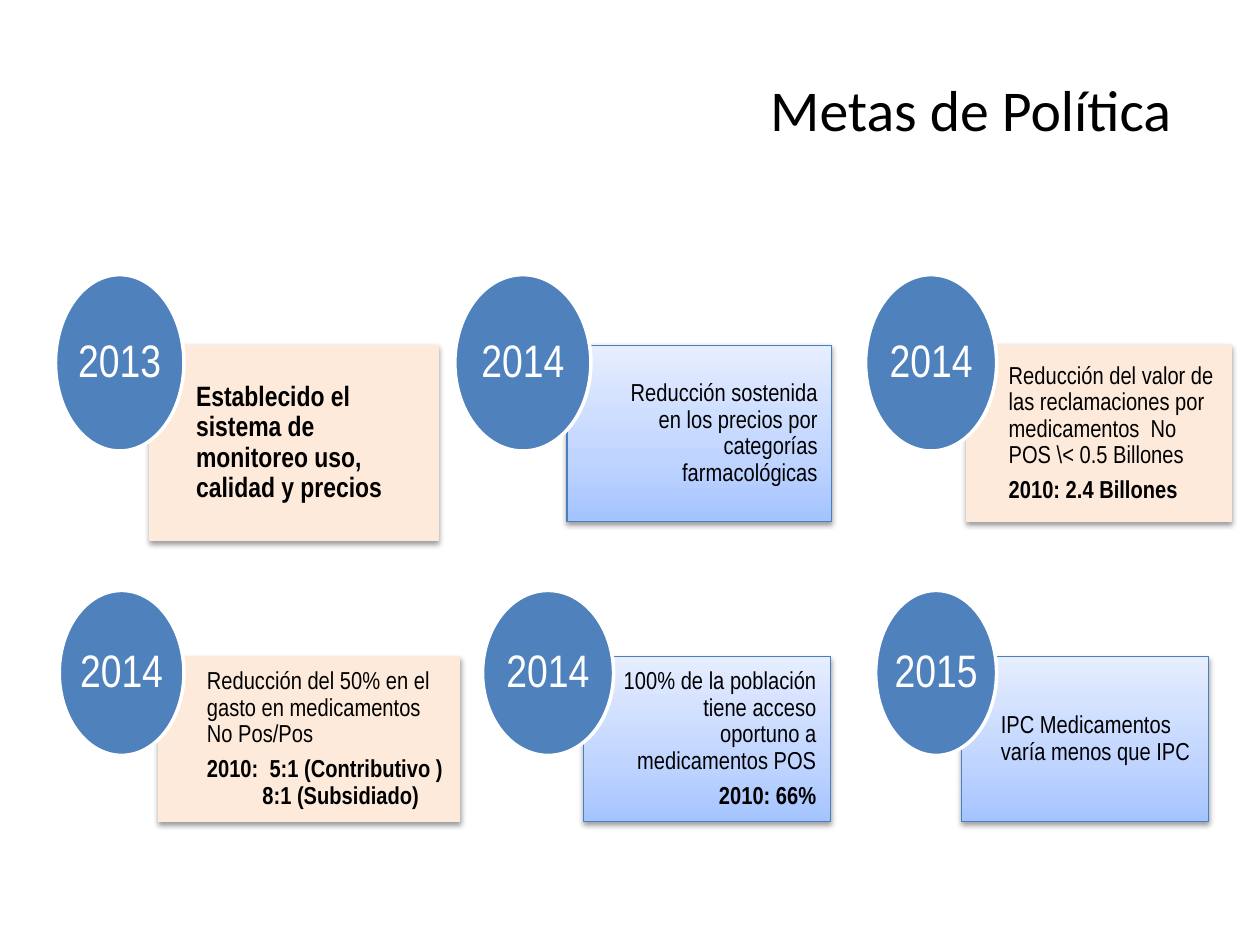
from copy import deepcopy

from lxml import etree
from pptx import Presentation
from pptx import util as u
from pptx.dml.color import RGBColor
from pptx.enum import shapes, text
from pptx.oxml.ns import qn

SCALE = 9144
COLORS = {
    "ink": "000000", "white": "FFFFFF", "badge": "4F81BD", "peach": "FDEADA",
    "blue_line": "4B7EBC", "blue_deep": "A4C4FF", "blue_mid": "BFD4FF", "blue_pale": "E6EEFF",
}
LEFT, RIGHT, CENTER = text.PP_ALIGN.LEFT, text.PP_ALIGN.RIGHT, text.PP_ALIGN.CENTER
ROWS = [
    {"top": 274, "badge_height": 140, "cards": [
        {"panel": (119, 229, 155), "badge": (44, 102), "year": "2013", "style": "peach",
         "align": LEFT, "size": 16,
         "lines": [("Establecido el sistema de monitoreo uso, calidad y precios", True, 0)]},
        {"panel": (450, 210, 140), "badge": (361, 108), "year": "2014", "style": "blue",
         "align": RIGHT, "size": 14,
         "lines": [("Reducción sostenida en los precios por categorías farmacológicas", False, 0)]},
        {"panel": (767, 210, 140), "badge": (687, 104), "year": "2014", "style": "peach",
         "align": LEFT, "size": 14,
         "lines": [("Reducción del valor de las reclamaciones por medicamentos  No POS \\< 0.5 Billones",
                    False, 0),
                   ("2010: 2.4 Billones", True, 0)]},
    ]},
    {"top": 521, "badge_height": 131, "cards": [
        {"panel": (126, 239, 131), "badge": (47, 99), "year": "2014", "style": "peach",
         "align": LEFT, "size": 14,
         "lines": [("Reducción del 50% en el gasto en medicamentos No Pos/Pos", False, 0),
                   ("2010:  5:1 (Contributivo )", True, 0),
                   ("8:1 (Subsidiado)", True, 44)]},
        {"panel": (463, 196, 131), "badge": (383, 104), "year": "2014", "style": "blue",
         "align": RIGHT, "size": 14,
         "lines": [("100% de la población tiene acceso oportuno a medicamentos POS", False, 0),
                   ("2010: 66%", True, 0)]},
        {"panel": (763, 196, 131), "badge": (695, 96), "year": "2015", "style": "blue",
         "align": LEFT, "size": 14,
         "lines": [("IPC Medicamentos varía menos que IPC", False, 0)]},
    ]},
]


def px(length):
    """Turn px into EMU."""
    return u.Emu(round(length * SCALE))


def rgb(name):
    """Look up a named colour."""
    return RGBColor.from_string(COLORS[name])


def set_margins(frame, left, top, right, bottom):
    """Set the four text insets and centre the text vertically."""
    frame.margin_left, frame.margin_top = px(left), px(top)
    frame.margin_right, frame.margin_bottom = px(right), px(bottom)
    frame.vertical_anchor = text.MSO_ANCHOR.MIDDLE


def format_para(para, align, font, size, color, bold=False):
    """Align a paragraph and format its runs."""
    para.alignment = align
    for span in para.runs:
        span.font.name, span.font.size = font, u.Pt(size)
        span.font.bold = bold
        span.font.color.rgb = rgb(color)


def add_box(page, kind, box, line, width):
    """Add a preset shape with a plain outline."""
    shape = page.shapes.add_shape(kind, *map(px, box))
    shape.shadow.inherit = False
    shape.line.color.rgb = rgb(line)
    shape.line.width = u.Pt(width)
    return shape


def fill_solid(shape, color):
    """Fill a shape with one colour."""
    shape.fill.solid()
    shape.fill.fore_color.rgb = rgb(color)


def fill_blue(shape):
    """Fill a shape with the blue gradient, deepest at the bottom."""
    shape.fill.gradient()
    shape.fill.gradient_angle = 90
    stops = shape._element.spPr.find(".//" + qn("a:gsLst"))
    stops.append(deepcopy(stops[-1]))
    ramp = [("blue_deep", 0), ("blue_mid", 0.35), ("blue_pale", 1)]
    for stop, (color, position) in zip(shape.fill.gradient_stops, ramp):
        stop.color.rgb = rgb(color)
        stop.position = position


def add_shadow(shape):
    """Give a shape a soft shadow below it."""
    effects = shape._element.spPr.find(qn("a:effectLst"))
    shadow = etree.SubElement(effects, qn("a:outerShdw"), blurRad="40000", dist="20000",
                              dir="5400000", rotWithShape="0")
    color = etree.SubElement(shadow, qn("a:srgbClr"), val=COLORS["ink"])
    etree.SubElement(color, qn("a:alpha"), val="38000")


def add_title(page, box):
    """Write the right-aligned title in its box."""
    title = page.shapes.add_textbox(*map(px, box))
    frame = title.text_frame
    frame.word_wrap = True
    set_margins(frame, 10, 5, 10, 5)
    frame.text = "Metas de Política "
    format_para(frame.paragraphs[0], RIGHT, "Calibri", 33, "ink")


def add_panel(page, box, card):
    """Draw a goal panel and its text."""
    line = "peach" if card["style"] == "peach" else "blue_line"
    panel = add_box(page, shapes.MSO_SHAPE.RECTANGLE, box, line, 0.75)
    if card["style"] == "peach":
        fill_solid(panel, "peach")
    else:
        fill_blue(panel)
    add_shadow(panel)
    frame = panel.text_frame
    frame.word_wrap = True
    set_margins(frame, 0.16 * box[2], 11, 11, 11)
    frame.text = "\n".join(line for line, bold, indent in card["lines"])
    for index, (para, (_, bold, indent)) in enumerate(zip(frame.paragraphs, card["lines"])):
        format_para(para, card["align"], "Arial Narrow", card["size"], "ink", bold)
        para.line_spacing = 0.9
        para.space_after = u.Pt(0.35 * card["size"])
        if indent:
            para._p.get_or_add_pPr().set("marL", str(px(indent)))
            frame.paragraphs[index - 1].space_after = u.Pt(0)


def add_badge(page, box, year):
    """Draw the oval with the year."""
    badge = add_box(page, shapes.MSO_SHAPE.OVAL, box, "white", 2)
    fill_solid(badge, "badge")
    frame = badge.text_frame
    frame.word_wrap = False
    set_margins(frame, 0, 0, 0, 0)
    frame.text = year
    format_para(frame.paragraphs[0], CENTER, "Arial Narrow", 26, "white")
    frame.paragraphs[0].line_spacing = 0.9


def add_row(page, row):
    """Draw a row of goals, each badge rising 40% above its panel."""
    badge_top = row["top"] - 0.4 * row["badge_height"]
    for card in row["cards"]:
        left, width, height = card["panel"]
        add_panel(page, (left, row["top"], width, height), card)
        badge_left, badge_width = card["badge"]
        add_badge(page, (badge_left, badge_top, badge_width, row["badge_height"]), card["year"])


def main():
    """Build and save the deck."""
    deck = Presentation()
    deck.slide_width, deck.slide_height = px(1000), px(750)
    page = deck.slides.add_slide(deck.slide_layouts[6])
    add_title(page, (50, 30, 900, 112))
    for row in ROWS:
        add_row(page, row)
    deck.save("out.pptx")


if __name__ == "__main__":
    main()
